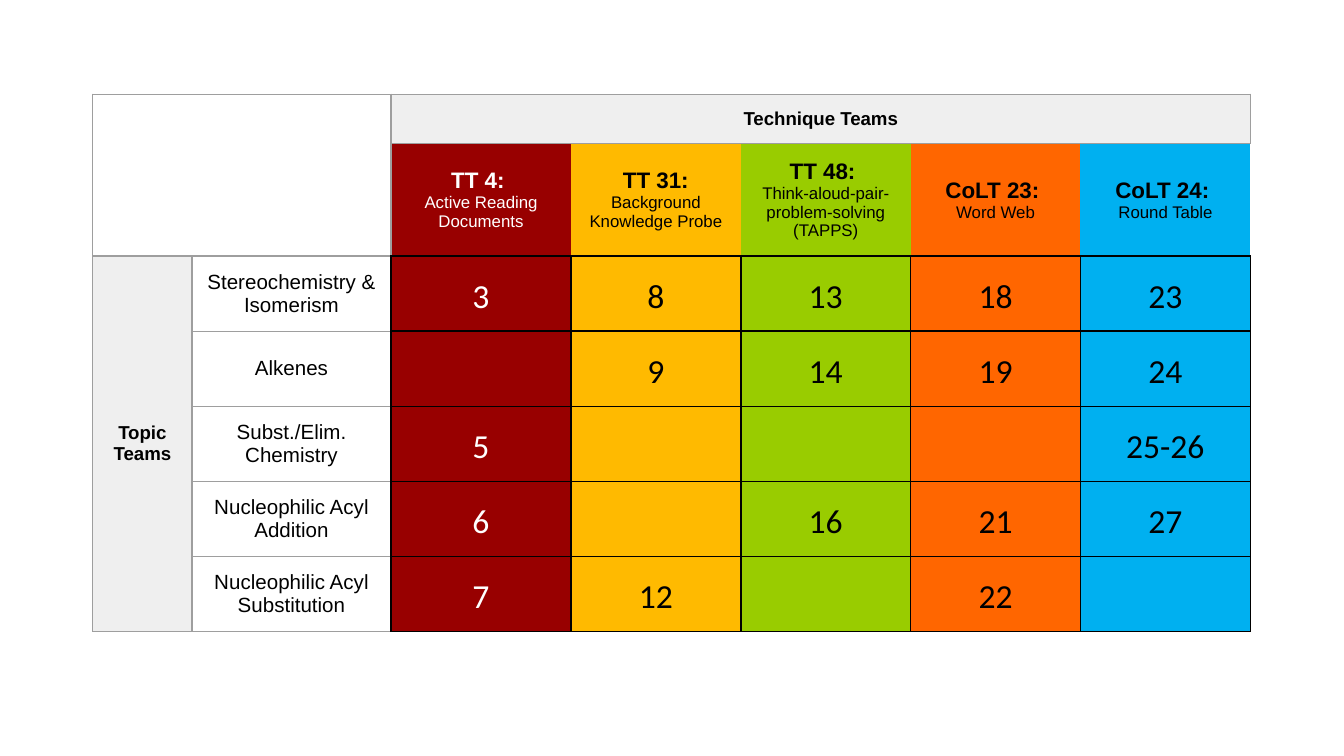
from pptx import Presentation
from pptx.dml.color import RGBColor
from pptx.enum.text import MSO_ANCHOR, PP_ALIGN
from pptx.oxml.ns import qn
from pptx.util import Cm, Pt
from lxml.etree import SubElement

# Content: each technique is a list of paragraphs, each a list of runs
TECHS = [
    ("red", "white", [["TT 4: "], ["Active Reading Documents"]]),
    ("gold", "black", [["TT 31: ", "Background Knowledge Probe"]]),
    ("green", "black", [["TT 48: "], ["Think-aloud-pair- problem-solving (TAPPS)"]]),
    ("orange", "black", [["CoLT 23: "], ["Word Web"]]),
    ("blue", "black", [["CoLT 24: "], ["Round Table"]]),
]
TOPICS = [
    ("Stereochemistry & Isomerism", ["3", "8", "13", "18", "23"]),
    ("Alkenes", ["", "9", "14", "19", "24"]),
    ("Subst./Elim. Chemistry", ["5", "", "", "", "25-26"]),
    ("Nucleophilic Acyl Addition", ["6", "", "16", "21", "27"]),
    ("Nucleophilic Acyl Substitution", ["7", "12", "", "22", ""]),
]
COLORS = {
    "black": "000000", "white": "FFFFFF", "gray": "9E9E9E", "pale": "EFEFEF",
    "red": "980000", "gold": "FFBA00", "green": "99CC00",
    "orange": "FF6600", "blue": "00B0F0",
}
WIDTHS = [1.88, 3.76, 3.4] + [3.21] * 4
HEIGHTS = [0.93, 2.13] + [1.42] * len(TOPICS)
GRAY, BLACK, CLEAR = ("gray", 0.75, 100), ("black", 1, 100), ("gray", 0.75, 0)


def rgb(name):
    return RGBColor.from_string(COLORS[name])


def edge(cell, left, top, right, bottom):
    """Set the four borders; each is (color, points, opacity percent)."""
    props = cell._tc.get_or_add_tcPr()
    sides = zip(("lnL", "lnR", "lnT", "lnB"), (left, right, top, bottom))
    for at, (tag, (color, width, alpha)) in enumerate(sides):
        line = SubElement(props, qn("a:" + tag), w=str(Pt(width)))
        props.insert(at, line)
        fill = SubElement(line, qn("a:solidFill"))
        tint = SubElement(fill, qn("a:srgbClr"), val=COLORS[color])
        if alpha < 100:
            SubElement(tint, qn("a:alpha"), val=str(alpha * 1000))


def write(cell, paras, color="black", font="Arial", space=None, pad=0.25):
    """Fill a cell with paragraphs of (text, size, bold) runs."""
    cell.vertical_anchor = MSO_ANCHOR.MIDDLE
    cell.margin_left = cell.margin_right = Cm(0.25)
    cell.margin_top = cell.margin_bottom = Cm(pad)
    frame = cell.text_frame
    for i, runs in enumerate(paras):
        para = frame.add_paragraph() if i else frame.paragraphs[0]
        para.alignment = PP_ALIGN.CENTER
        para.line_spacing = space
        for text, size, bold in runs:
            run = para.add_run()
            run.text = text
            run.font.name = font
            run.font.size = Pt(size)
            run.font.bold = bold
            run.font.color.rgb = rgb(color)


def paint(cell, color):
    cell.fill.solid()
    cell.fill.fore_color.rgb = rgb(color)


# Slide
deck = Presentation()
deck.slide_width, deck.slide_height = Cm(25.4), Cm(14.29)
slide = deck.slides.add_slide(deck.slide_layouts[6])

# Table grid
rows, cols = len(HEIGHTS), len(WIDTHS)
grid = slide.shapes.add_table(rows, cols, Cm(1.75), Cm(1.78),
                              Cm(sum(WIDTHS)), Cm(sum(HEIGHTS))).table
grid.first_row = grid.horz_banding = False
for col, width in zip(grid.columns, WIDTHS):
    col.width = Cm(width)
for row, height in zip(grid.rows, HEIGHTS):
    row.height = Cm(height)

# Fills and borders
for r in range(rows):
    for c in range(cols):
        cell = grid.cell(r, c)
        if c >= 2 and r >= 1:
            paint(cell, TECHS[c - 2][0])
        elif (r == 0 and c >= 2) or (c == 0 and r >= 2):
            paint(cell, "pale")
        else:
            cell.fill.background()
        if r >= 2 and c >= 2:
            edge(cell, BLACK, BLACK, BLACK, BLACK)
        elif r == 1 and c >= 2:
            edge(cell, GRAY if c == 2 else CLEAR, GRAY, CLEAR, BLACK)
        else:
            edge(cell, GRAY, GRAY, BLACK if r >= 2 and c == 1 else GRAY, GRAY)

# Merged headings
grid.cell(0, 0).merge(grid.cell(1, 1))
grid.cell(0, 2).merge(grid.cell(0, cols - 1))
grid.cell(2, 0).merge(grid.cell(rows - 1, 0))
write(grid.cell(0, 2), [[("Technique Teams", 10, True)]])
write(grid.cell(2, 0), [[("Topic Teams", 10, True)]])

# Technique headings
for c, (_, ink, paras) in enumerate(TECHS, 2):
    styled = [[(t, 12, True) if t.endswith(": ") else (t, 9, False) for t in runs]
              for runs in paras]
    write(grid.cell(1, c), styled, ink)

# Topic rows
for r, (topic, teams) in enumerate(TOPICS, 2):
    write(grid.cell(r, 1), [[(topic, 11, False)]])
    for c, (team, tech) in enumerate(zip(teams, TECHS), 2):
        if team:
            write(grid.cell(r, c), [[(team, 18, False)]], tech[1],
                  "Calibri", 1.15, 0.13)

deck.save("out.pptx")
